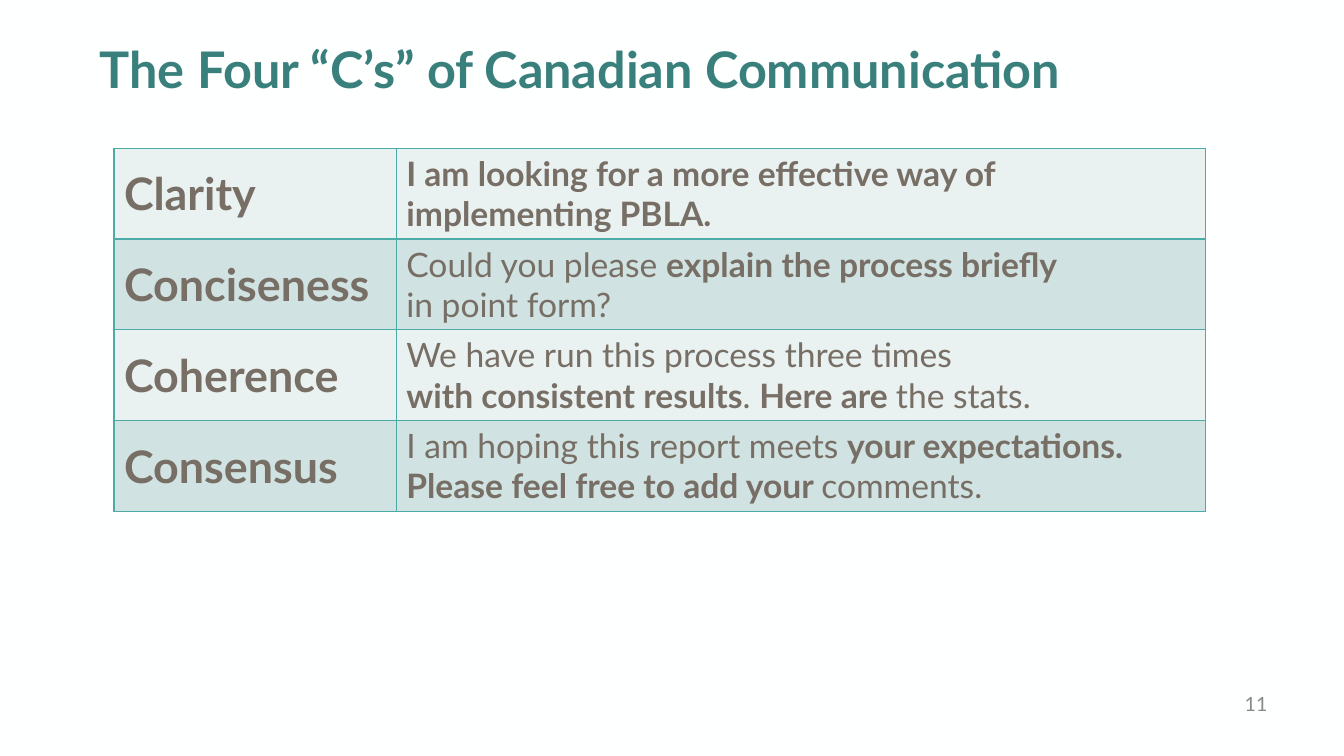
"""Build the slide on the four C's of Canadian communication."""
from lxml import etree
from pptx import Presentation
from pptx import util as u
from pptx.dml.color import RGBColor
from pptx.enum import text
from pptx.oxml.ns import qn

COLORS = {
    "background": "FEFFFF",
    "title": "39807D",
    "body": "776E65",
    "number": "898989",
    "border": "4CABA6",
    "light": "E9F1F1",
    "dark": "D0E2E1",
}
ROWS = [
    ("Clarity", [[("I am looking for a more effective way of implementing PBLA.", True)]]),
    ("Conciseness", [
        [("Could you please ", False), ("explain the process briefly", True)],
        [("in point form?", False)],
    ]),
    ("Coherence", [
        [("We have run this process three times", False)],
        [("with consistent results", True), (". ", False), ("Here are ", True),
         ("the stats.", False)],
    ]),
    ("Consensus", [
        [("I am hoping this report meets ", False),
         ("your expectations. Please feel free to add your ", True),
         ("comments.", False)],
    ]),
]


def add_run(paragraph, words, size, color, bold=False):
    run = paragraph.add_run()
    run.text = words
    run.font.name = "Lato"
    run.font.size = u.Pt(size)
    run.font.bold = bold
    run.font.color.rgb = RGBColor.from_string(COLORS[color])


def add_text_box(left, top, width, height, anchor):
    shape = slide.shapes.add_textbox(
        u.Inches(left), u.Inches(top), u.Inches(width), u.Inches(height))
    shape.text_frame.word_wrap = True
    shape.text_frame.vertical_anchor = anchor
    return shape.text_frame.paragraphs[0]


presentation = Presentation()
presentation.slide_width = u.Inches(13.33)
presentation.slide_height = u.Inches(7.5)
slide = presentation.slides.add_slide(presentation.slide_layouts[6])
slide.background.fill.solid()
slide.background.fill.fore_color.rgb = RGBColor.from_string(COLORS["background"])

number = add_text_box(12.01, 6.78, 0.66, 0.4, text.MSO_ANCHOR.MIDDLE)
number.alignment = text.PP_ALIGN.RIGHT
add_run(number, "11", 14, "number")

title = add_text_box(0.89, 0.4, 11.32, 0.8, text.MSO_ANCHOR.TOP)
title.line_spacing = 0.9
add_run(title, "The Four “C’s” of Canadian Communication", 36, "title", True)

table = slide.shapes.add_table(
    len(ROWS), 2, u.Inches(1.13), u.Inches(1.47), u.Inches(10.83), u.Inches(3.6)).table
table.columns[0].width = u.Inches(2.8)
table.columns[1].width = u.Inches(8.03)

for index, (term, example) in enumerate(ROWS):
    term_cell, example_cell = table.cell(index, 0), table.cell(index, 1)
    add_run(term_cell.text_frame.paragraphs[0], term, 32, "body", True)
    paragraph = example_cell.text_frame.paragraphs[0]
    for line_index, line in enumerate(example):
        if line_index:
            paragraph.add_line_break()
        for words, bold in line:
            add_run(paragraph, words, 24, "body", bold)

    for cell in (term_cell, example_cell):
        cell.vertical_anchor = text.MSO_ANCHOR.MIDDLE
        properties = cell._tc.get_or_add_tcPr()
        for side in ("a:lnL", "a:lnR", "a:lnT", "a:lnB"):
            border = etree.SubElement(properties, qn(side), w=str(u.Pt(1)))
            fill = etree.SubElement(border, qn("a:solidFill"))
            etree.SubElement(fill, qn("a:srgbClr"), val=COLORS["border"])
        cell.fill.solid()
        cell.fill.fore_color.rgb = RGBColor.from_string(
            COLORS["dark" if index % 2 else "light"])

presentation.save("out.pptx")
